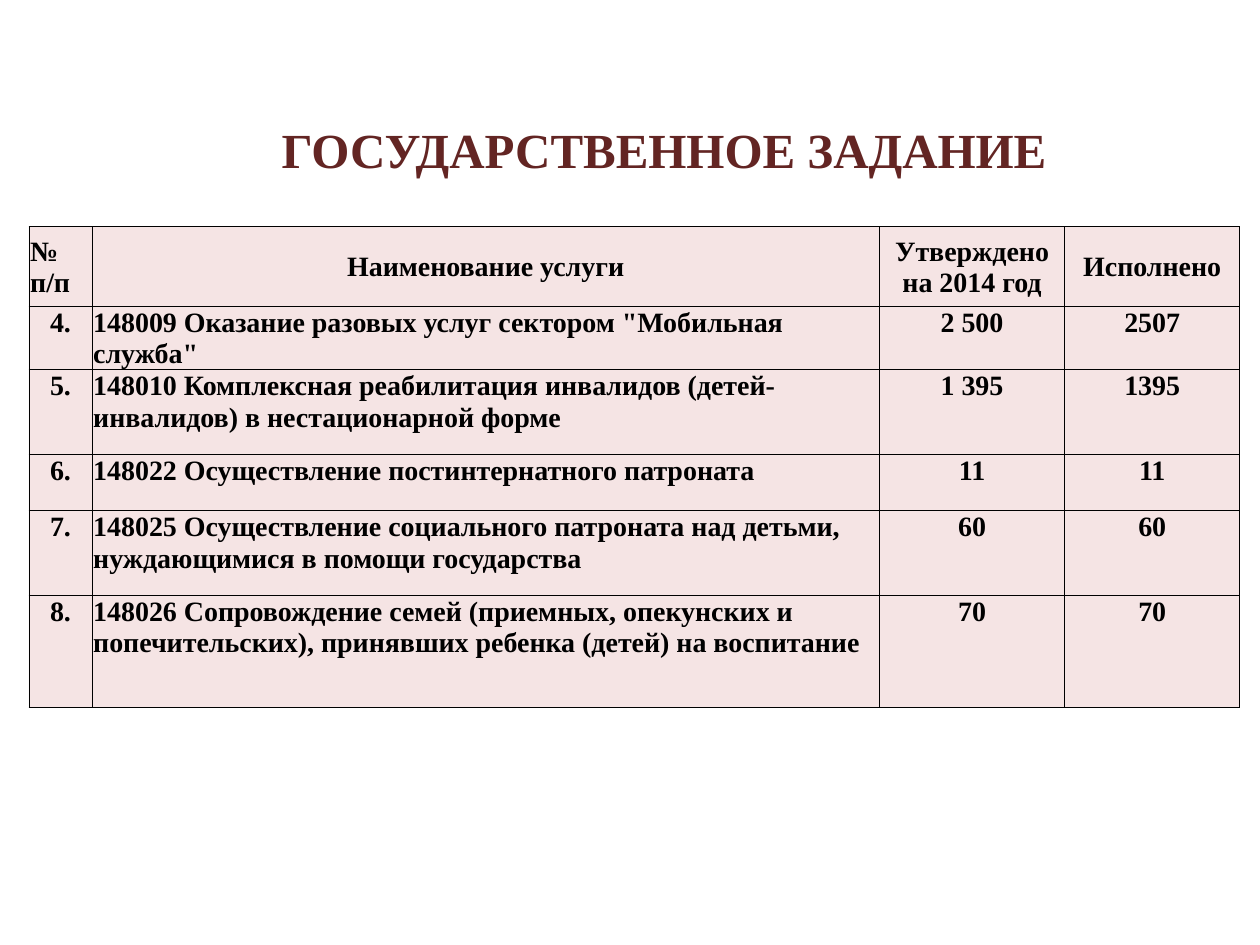
from dataclasses import dataclass

from lxml import etree
from pptx import Presentation
from pptx.dml.color import RGBColor
from pptx.enum.text import MSO_ANCHOR, PP_ALIGN
from pptx.oxml.ns import qn
from pptx.util import Inches, Pt

CENTER, LEFT = PP_ALIGN.CENTER, PP_ALIGN.LEFT
MIDDLE, TOP = MSO_ANCHOR.MIDDLE, MSO_ANCHOR.TOP
BORDER_SIDES = ("a:lnL", "a:lnR", "a:lnT", "a:lnB")


@dataclass(frozen=True)
class Theme:
    """Colours, fonts and sizes of the slide."""
    face: str = "Times New Roman"
    heading: str = "632523"
    ink: str = "000000"
    cell: str = "F2DCDB"
    cell_opacity: int = 75
    heading_size: int = 28
    body_size: int = 16
    border: float = 0.5


THEME = Theme()
WIDTH, HEIGHT = 10, 7.5
TITLE = "ГОСУДАРСТВЕННОЕ ЗАДАНИЕ"
TITLE_BOX = (1.02, 0.86, 8.5, 0.7)
TABLE_ORIGIN = (0.23, 1.8)
COLUMNS = (0.5, 6.25, 1.47, 1.39)
ROWS = (0.63, 0.45, 0.67, 0.45, 0.67, 0.89)
SERVICES = (
    ("№ п/п", "Наименование услуги", "Утверждено на 2014 год", "Исполнено"),
    ("4.", '148009 Оказание разовых услуг сектором "Мобильная служба"', "2 500", "2507"),
    ("5.", "148010 Комплексная реабилитация инвалидов (детей-инвалидов) "
           "в нестационарной форме", "1 395", "1395"),
    ("6.", "148022 Осуществление постинтернатного патроната", "11", "11"),
    ("7.", "148025 Осуществление социального патроната над детьми, "
           "нуждающимися в помощи государства", "60", "60"),
    ("8.", "148026 Сопровождение семей (приемных, опекунских и попечительских), "
           "принявших ребенка (детей) на воспитание", "70", "70"),
)


def apply(target, values):
    """Set every attribute in a dict of format values."""
    for attribute, value in values.items():
        setattr(target, attribute, value)


def write(frame, text, size, color, align):
    """Put one bold paragraph into a text frame."""
    paragraph = frame.paragraphs[0]
    paragraph.alignment = align
    run = paragraph.add_run()
    run.text = text
    apply(run.font, {"name": THEME.face, "size": Pt(size), "bold": True})
    run.font.color.rgb = RGBColor.from_string(color)


def add_title(slide):
    """Add the centred heading."""
    frame = slide.shapes.add_textbox(*map(Inches, TITLE_BOX)).text_frame
    apply(frame, {"word_wrap": True, "vertical_anchor": MIDDLE})
    write(frame, TITLE, THEME.heading_size, THEME.heading, CENTER)
    frame.paragraphs[0].line_spacing = 0.9


def style_cell(cell, anchor):
    """Give a cell its margins, borders and translucent fill."""
    apply(cell, {"margin_left": Inches(0.01), "margin_right": Inches(0.01),
                 "margin_top": Inches(0.01), "margin_bottom": 0,
                 "vertical_anchor": anchor})
    properties = cell._tc.get_or_add_tcPr()
    for side in BORDER_SIDES:
        line = etree.SubElement(properties, qn(side), w=str(Pt(THEME.border)))
        solid = etree.SubElement(line, qn("a:solidFill"))
        etree.SubElement(solid, qn("a:srgbClr"), val=THEME.ink)
    cell.fill.solid()
    cell.fill.fore_color.rgb = RGBColor.from_string(THEME.cell)
    tint = properties.find(qn("a:solidFill")).find(qn("a:srgbClr"))
    etree.SubElement(tint, qn("a:alpha"), val=str(THEME.cell_opacity * 1000))


def add_services(slide):
    """Add the table of services, planned and fulfilled."""
    table = slide.shapes.add_table(
        len(ROWS), len(COLUMNS), *map(Inches, TABLE_ORIGIN),
        Inches(sum(COLUMNS)), Inches(sum(ROWS))).table
    apply(table, {"first_row": False, "horz_banding": False})
    for column, width in zip(table.columns, COLUMNS):
        column.width = Inches(width)
    for row, height in zip(table.rows, ROWS):
        row.height = Inches(height)
    for row_index, service in enumerate(SERVICES):
        is_header = row_index == 0
        left_column = 0 if is_header else 1
        for column_index, text in enumerate(service):
            cell = table.cell(row_index, column_index)
            style_cell(cell, MIDDLE if is_header else TOP)
            write(cell.text_frame, text, THEME.body_size, THEME.ink,
                  LEFT if column_index == left_column else CENTER)


def main():
    """Build and save the slide."""
    deck = Presentation()
    apply(deck, {"slide_width": Inches(WIDTH), "slide_height": Inches(HEIGHT)})
    slide = deck.slides.add_slide(deck.slide_layouts[6])
    add_services(slide)
    add_title(slide)
    deck.save("out.pptx")


if __name__ == "__main__":
    main()
